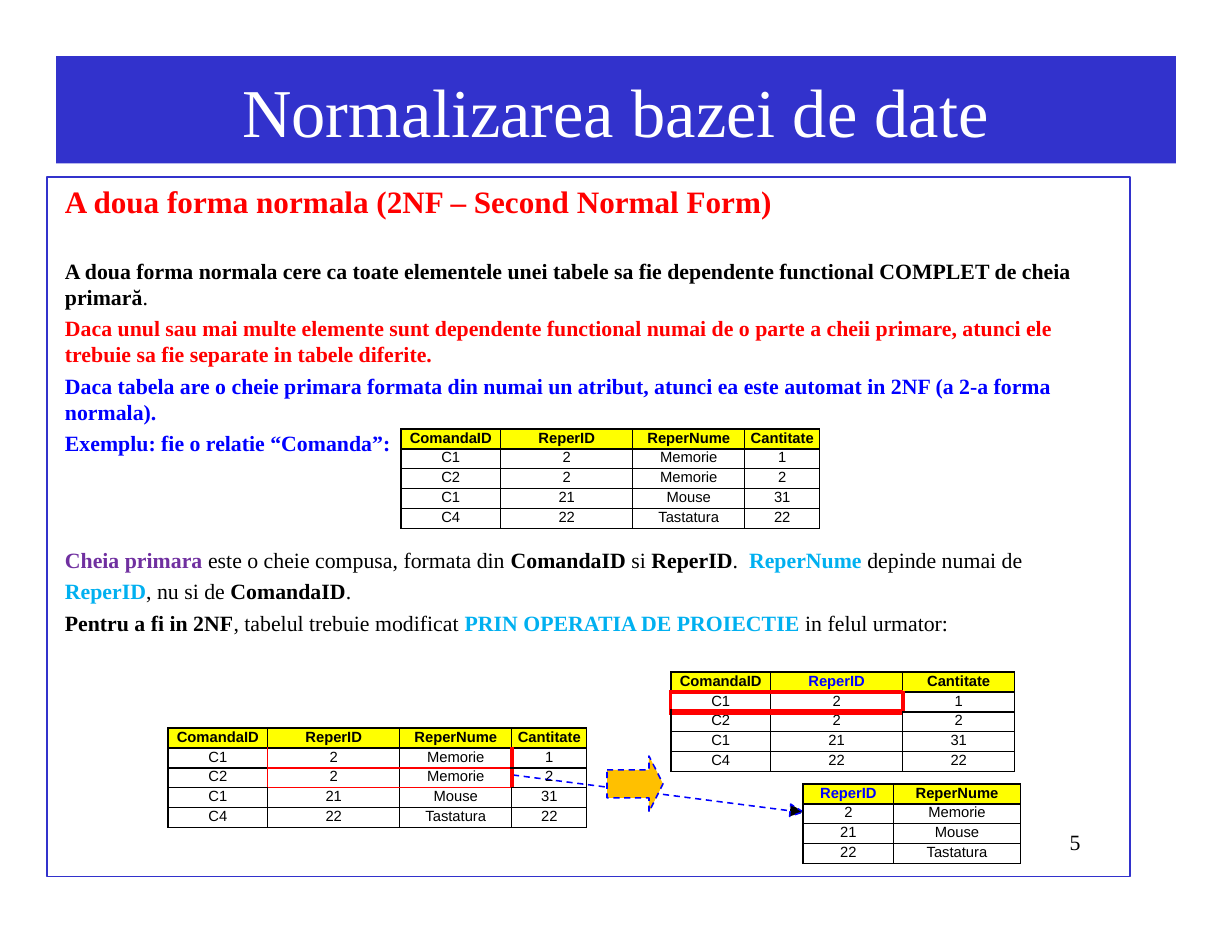
from dataclasses import dataclass, field
from typing import NamedTuple

from lxml.etree import SubElement
from pptx import Presentation
from pptx.dml.color import RGBColor
from pptx.enum.dml import MSO_LINE
from pptx.enum.shapes import MSO_CONNECTOR, MSO_SHAPE
from pptx.enum.text import MSO_ANCHOR, MSO_AUTO_SIZE, PP_ALIGN
from pptx.oxml.ns import qn
from pptx.util import Inches, Pt

BLACK, WHITE, RED, BLUE = "000000", "FFFFFF", "FF0000", "0000FF"
NAVY, YELLOW, PURPLE, CYAN, AMBER = "3232CC", "FFFF00", "7030A0", "00B0F0", "FFC000"
SERIF, SANS = "Times New Roman", "Arial"


class Span(NamedTuple):
    text: str
    color: str = BLACK
    bold: bool = False


class Edge(NamedTuple):
    row: int
    col: int
    side: str
    width: float


@dataclass
class Para:
    spans: list[Span]
    size: float = 14
    before: float = 0
    line: float | None = None


@dataclass
class Grid:
    left: float
    top: float
    height: float
    cols: list[float]
    rows: list[list[str]]
    keys: list[str] = field(default_factory=list)  # headings in blue
    marks: list[Edge] = field(default_factory=list)  # red borders


def rgb(code: str) -> RGBColor:
    return RGBColor.from_string(code)


def style(font, size: float, name: str, color: str | None = None, bold: bool | None = None) -> None:
    font.size, font.name = Pt(size), name
    if color:
        font.color.rgb = rgb(color)
    if bold is not None:
        font.bold = bold


def place(shape, left: float, top: float, width: float, height: float) -> None:
    shape.left, shape.top = Inches(left), Inches(top)
    shape.width, shape.height = Inches(width), Inches(height)


def setup(frame, right: float = 0) -> None:
    frame.word_wrap, frame.auto_size = True, MSO_AUTO_SIZE.NONE
    frame.margin_left = frame.margin_bottom = 0
    frame.margin_top, frame.margin_right = Inches(0.01), Inches(right)
    frame.vertical_anchor = MSO_ANCHOR.TOP


def write(frame, paras: list[Para]) -> None:
    for i, item in enumerate(paras):
        par = frame.paragraphs[0] if i == 0 else frame.add_paragraph()
        par.alignment, par.space_before = PP_ALIGN.LEFT, Pt(item.before)
        if item.line:
            par.line_spacing = item.line
        props = par._p.get_or_add_pPr()
        props.set("marL", "0")
        props.set("indent", "0")
        SubElement(props, qn("a:buNone"))
        if len(item.spans) == 1:
            style(par.font, item.size, SERIF, item.spans[0].color, item.spans[0].bold)
        else:
            style(par.font, item.size, SERIF)
        for span in item.spans:
            run = par.add_run()
            run.text = span.text
            if len(item.spans) > 1:
                run.font.bold, run.font.color.rgb = span.bold, rgb(span.color)


def border(cell, side: str, color: str, width: float) -> None:
    line = SubElement(cell._tc.get_or_add_tcPr(), qn(f"a:ln{side}"), w=str(Pt(width)))
    SubElement(SubElement(line, qn("a:solidFill")), qn("a:srgbClr"), val=color)


def draw(shapes, grid: Grid) -> None:
    count = len(grid.rows)
    table = shapes.add_table(count, len(grid.cols), Inches(grid.left), Inches(grid.top),
                             Inches(sum(grid.cols)), Inches(grid.height)).table
    for col, width in zip(table.columns, grid.cols):
        col.width = Inches(width)
    # Each mark also belongs to the cell on its other side
    other = {"L": (0, -1, "R"), "R": (0, 1, "L"), "T": (-1, 0, "B"), "B": (1, 0, "T")}
    red = {}
    for row, col, side, width in grid.marks:
        down, over, back = other[side]
        red[row, col, side] = red[row + down, col + over, back] = width
    for r, texts in enumerate(grid.rows):
        table.rows[r].height = Inches(grid.height / count)
        for c, text in enumerate(texts):
            cell = table.cell(r, c)
            cell.margin_left = cell.margin_right = cell.margin_top = cell.margin_bottom = 0
            for side in "LRTB":
                width = red.get((r, c, side))
                border(cell, side, RED if width else BLACK, width or 1)
            if r == 0:
                cell.fill.solid()
                cell.fill.fore_color.rgb = rgb(YELLOW)
            else:
                cell.fill.background()
            cell.text = text
            par = cell.text_frame.paragraphs[0]
            par.alignment, par.line_spacing = PP_ALIGN.CENTER, Pt(11.1)
            style(par.font, 9.5, SANS, BLUE if r == 0 and text in grid.keys else BLACK, r == 0)


def outline(shape, fill: str | None, color: str, width: float, dash: bool = False) -> None:
    shape.shadow.inherit = False
    if fill:
        shape.fill.solid()
        shape.fill.fore_color.rgb = rgb(fill)
    else:
        shape.fill.background()
    shape.line.color.rgb, shape.line.width = rgb(color), Pt(width)
    if dash:
        shape.line.dash_style = MSO_LINE.DASH


HEADS = ["ComandaID", "ReperID", "ReperNume", "Cantitate"]
ORDERS = [HEADS, ["C1", "2", "Memorie", "1"], ["C2", "2", "Memorie", "2"],
          ["C1", "21", "Mouse", "31"], ["C4", "22", "Tastatura", "22"]]
WIDE = [0.89, 1.18, 1, 0.67]
PARTS = [["ReperID", "ReperNume"], ["2", "Memorie"], ["21", "Mouse"], ["22", "Tastatura"]]

RULES = [
    Para([Span("A doua forma normala (2NF – Second Normal Form)", RED, True)], 20, 0.9),
    Para([Span("A doua forma normala cere ca toate elementele unei tabele sa fie dependente "
               "functional COMPLET de cheia primară", BLACK, True), Span(".")], before=24),
    Para([Span("Daca unul sau mai multe elemente sunt dependente functional numai de o parte a "
               "cheii primare, atunci ele trebuie sa fie separate in tabele diferite.", RED, True)],
         before=3.2),
    Para([Span("Daca tabela are o cheie primara formata din numai un atribut, atunci ea este "
               "automat in 2NF (a 2-a forma normala).", BLUE, True)], before=4),
    Para([Span("Exemplu: fie o relatie “Comanda”:", BLUE, True)], before=2.8),
]
NOTES = [
    Para([Span("Cheia primara ", PURPLE, True), Span("este o cheie compusa, formata din "),
          Span("ComandaID ", bold=True), Span("si "), Span("ReperID", bold=True), Span(".  "),
          Span("ReperNume", CYAN, True), Span(" depinde numai de "), Span("ReperID", CYAN, True),
          Span(", nu si de "), Span("ComandaID", bold=True), Span(".")], before=0.9, line=1.19),
    Para([Span("Pentru a fi in 2NF", bold=True), Span(", tabelul trebuie modificat "),
          Span("PRIN OPERATIA DE PROIECTIE ", CYAN, True), Span("in felul urmator:")], before=3.4),
]
GRIDS = [
    Grid(3.58, 3.83, 0.89, WIDE, ORDERS),
    Grid(5.99, 6, 0.89, WIDE[:3], [row[:2] + row[3:] for row in ORDERS], ["ReperID"],
         [Edge(1, 0, "L", 2.25), Edge(1, 1, "R", 3)]
         + [Edge(1, c, s, w) for c in (0, 1) for s, w in (("T", 3), ("B", 4.25))]),
    Grid(7.17, 7, 0.71, [0.81, 1.13], PARTS, ["ReperID"]),
    Grid(1.5, 6.5, 0.89, WIDE, ORDERS, marks=[
        Edge(r, c, s, w) for r in (1, 2)
        for c, s, w in ((0, "R", 1), (1, "B", 1), (2, "B", 1), (2, "R", 3))]),
]


def main() -> None:
    deck = Presentation()
    deck.slide_width, deck.slide_height = Inches(11), Inches(8.5)
    slide = deck.slides.add_slide(deck.slide_layouts[1])
    shapes = slide.shapes

    # Title band
    title, body = shapes.title, slide.placeholders[1]
    place(title, 0.5, 0.5, 10, 0.96)
    title.fill.solid()
    title.fill.fore_color.rgb = rgb(NAVY)
    title.text = "Normalizarea bazei de date"
    setup(title.text_frame)
    title.text_frame.vertical_anchor = MSO_ANCHOR.MIDDLE
    head = title.text_frame.paragraphs[0]
    head.alignment = PP_ALIGN.CENTER
    style(head.font, 44, SERIF, WHITE)

    # Frame and text
    box = shapes.add_shape(MSO_SHAPE.RECTANGLE, Inches(0.42), Inches(1.58), Inches(9.67), Inches(6.25))
    outline(box, None, NAVY, 0.72)
    place(body, 0.58, 1.62, 9.5, 2.48)
    setup(body.text_frame, 0.3)
    write(body.text_frame, RULES)
    for spot, paras in (((0.58, 4.83, 8.83, 0.86), NOTES),
                        ((9.55, 7.39, 0.18, 0.22), [Para([Span("5")])])):
        text = shapes.add_textbox(*map(Inches, spot)).text_frame
        setup(text)
        write(text, paras)

    # Dashed arrow with its head, then the block arrow over it
    link = shapes.add_connector(MSO_CONNECTOR.STRAIGHT, Inches(4.58), Inches(6.92),
                                Inches(7.06), Inches(7.24))
    link.line.color.rgb, link.line.width = rgb(BLUE), Pt(1)
    link.line.dash_style = MSO_LINE.DASH
    SubElement(link._element.spPr, qn("a:effectLst"))
    pen = shapes.build_freeform(Inches(7.17), Inches(7.25))
    pen.add_line_segments([(Inches(7.06), Inches(7.18)), (Inches(7.05), Inches(7.29))])
    outline(pen.convert_to_shape(), BLACK, BLUE, 1, True)
    block = shapes.add_shape(MSO_SHAPE.RIGHT_ARROW, Inches(5.42), Inches(6.75), Inches(0.5), Inches(0.5))
    block.adjustments[1] = 0.25
    outline(block, AMBER, BLUE, 1, True)

    for grid in GRIDS:
        draw(shapes, grid)
    deck.save("out.pptx")


if __name__ == "__main__":
    main()
